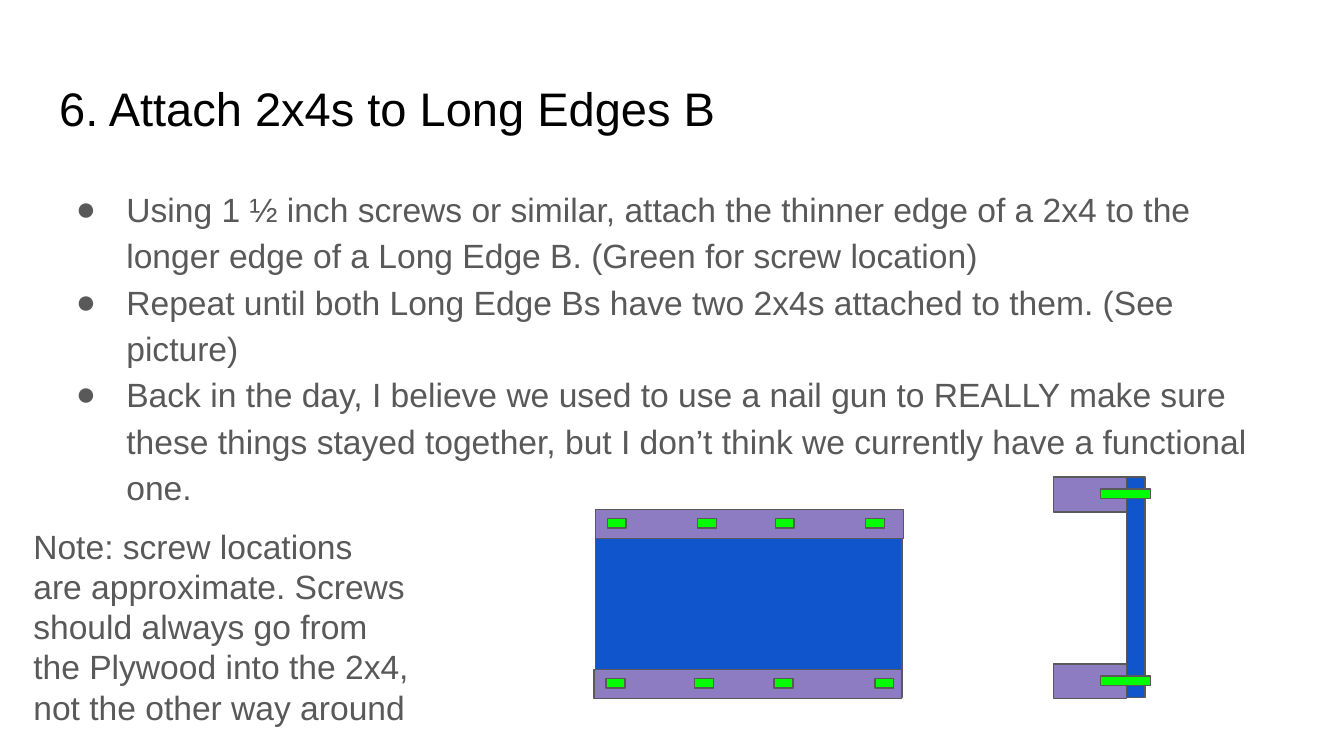
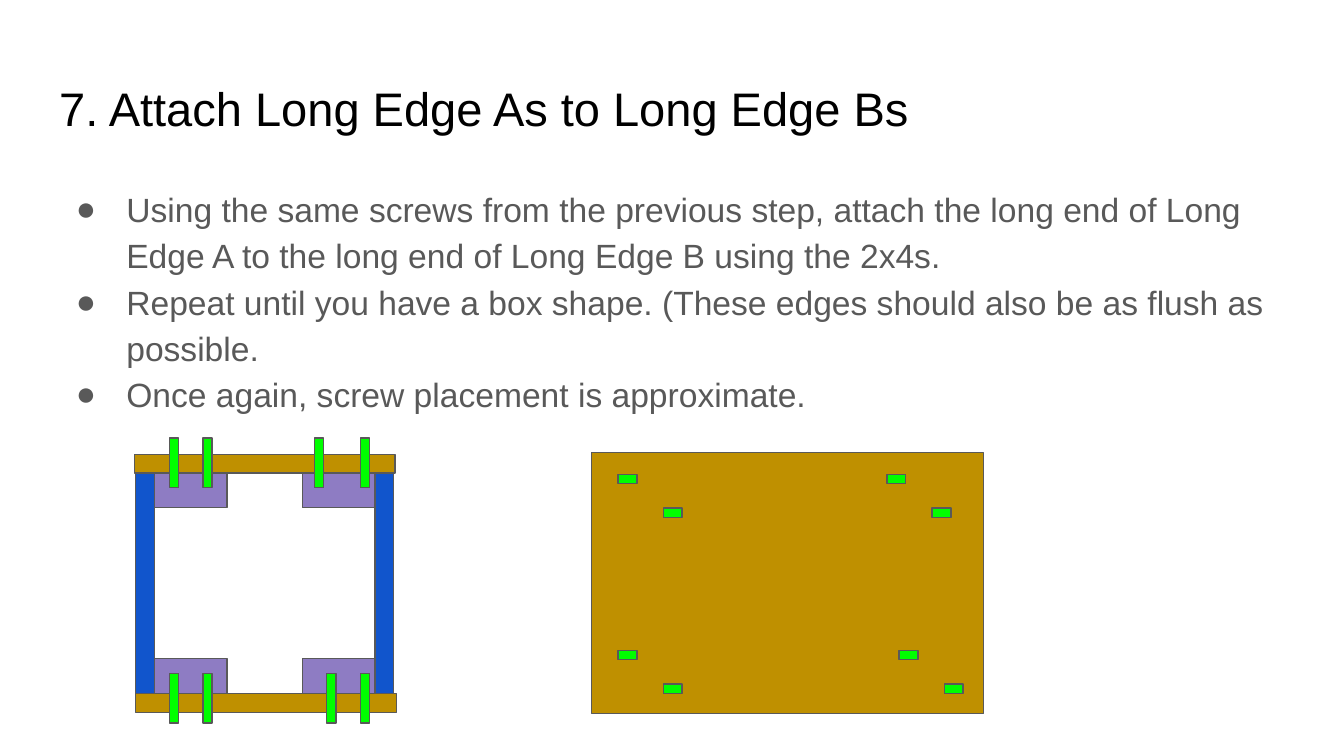
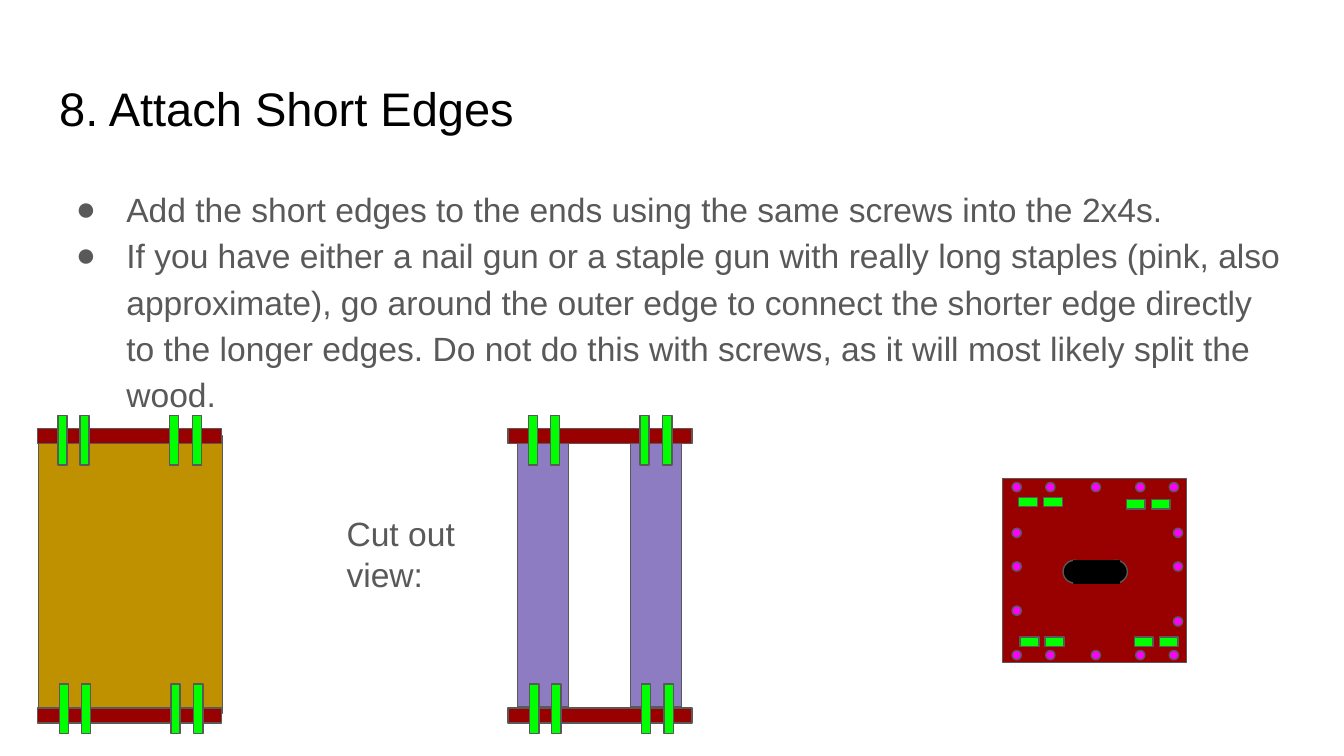
"""Build three assembly-step slides with simple construction diagrams."""
from itertools import product

from lxml.etree import SubElement
from pptx import Presentation
from pptx.dml.color import RGBColor
from pptx.enum.shapes import MSO_SHAPE
from pptx.enum.text import MSO_ANCHOR, MSO_AUTO_SIZE, PP_ALIGN
from pptx.oxml.ns import qn
from pptx.util import Pt

BLUE, PURPLE, GOLD, RED = "1155CC", "8E7CC3", "BF9000", "990000"
GREEN, PINK, BLACK, GREY = "00FF00", "FF00FF", "000000", "595959"
HEAD = (10.1, 5)
SCREW = (26.6, 5)
STUD = (38.9, 18.7)
SIDE = (10.1, 118.1)


def box(s, fill, pos, size, rot=0, kind=MSO_SHAPE.RECTANGLE, line=GREY):
    """Draw one outlined part."""
    sp = s.shapes.add_shape(kind, *map(Pt, (*pos, *size)))
    sp.rotation = rot
    sp.shadow.inherit = False
    sp.fill.solid()
    sp.fill.fore_color.rgb = RGBColor.from_string(fill)
    sp.line.color.rgb = RGBColor.from_string(line)
    sp.line.width = Pt(0.75)


def write(sp, area, texts, size=18, color=GREY, bullet=False):
    """Place a text shape and fill it with one paragraph per text."""
    sp.left, sp.top, sp.width, sp.height = map(Pt, area)
    tf = sp.text_frame
    tf.word_wrap = True
    tf.auto_size = MSO_AUTO_SIZE.NONE
    tf.margin_left = tf.margin_right = tf.margin_top = tf.margin_bottom = Pt(7.2)
    for i, text in enumerate(texts):
        p = tf.add_paragraph() if i else tf.paragraphs[0]
        p.alignment = PP_ALIGN.LEFT
        p.space_before = Pt(0)
        if bullet:
            p.line_spacing = 1.15
            pPr = p._p.get_or_add_pPr()
            pPr.set("marL", str(Pt(36)))
            pPr.set("indent", str(Pt(-27)))
            clr = SubElement(pPr, qn("a:buClr"))
            SubElement(clr, qn("a:srgbClr"), val=color)
            SubElement(pPr, qn("a:buFont"), typeface="Arial")
            SubElement(pPr, qn("a:buChar"), char="●")
        r = p.add_run()
        r.text = text
        r.font.name = "Arial"
        r.font.size = Pt(size)
        r.font.color.rgb = RGBColor.from_string(color)


prs = Presentation()
prs.slide_width, prs.slide_height = Pt(720), Pt(405)

steps = [
    ("6. Attach 2x4s to Long Edges B", 188.6, [
        "Using 1 ½ inch screws or similar, attach the thinner edge of a 2x4 to the "
        "longer edge of a Long Edge B. (Green for screw location)",
        "Repeat until both Long Edge Bs have two 2x4s attached to them. (See picture)",
        "Back in the day, I believe we used to use a nail gun to REALLY make sure these "
        "things stayed together, but I don’t think we currently have a functional one.",
    ]),
    ("7. Attach Long Edge As to Long Edge Bs", 139.7, [
        "Using the same screws from the previous step, attach the long end of Long "
        "Edge A to the long end of Long Edge B using the 2x4s.",
        "Repeat until you have a box shape. (These edges should also be as flush as "
        "possible.",
        "Once again, screw placement is approximate.",
    ]),
    ("8. Attach Short Edges", 140.4, [
        "Add the short edges to the ends using the same screws into the 2x4s.",
        "If you have either a nail gun or a staple gun with really long staples (pink, "
        "also approximate), go around the outer edge to connect the shorter edge "
        "directly to the longer edges. Do not do this with screws, as it will most "
        "likely split the wood.",
    ]),
]
for title, height, bullets in steps:
    s = prs.slides.add_slide(prs.slide_layouts[1])
    write(s.shapes.title, (24.5, 35.3, 671, 45.1), [title], 25.2, BLACK)
    s.shapes.title.text_frame.vertical_anchor = MSO_ANCHOR.MIDDLE
    write(s.placeholders[1], (24.5, 90.7, 671, height), bullets, bullet=True)
edge_b, frame, ends = prs.slides

box(edge_b, BLUE, (319, 272.9), (164.2, 100.8))
for pos in [(319, 272.9), (318.2, 358.6)]:
    box(edge_b, PURPLE, pos, (164.9, 15.8))
box(edge_b, BLUE, (603.4, 255.6), SIDE)
for y in (255.6, 355.7):
    box(edge_b, PURPLE, (564.5, y), STUD)
    box(edge_b, GREEN, (589.7, y + 6.5), SCREW)
for y, xs in [(277.9, (325.4, 373.7, 415.4, 463.7)),
              (363.6, (324.7, 372.2, 414.7, 468.7))]:
    for x in xs:
        box(edge_b, GREEN, (x, y), HEAD)
write(edge_b.shapes.add_textbox(0, 0, 0, 0), (10.8, 274.3, 216, 100.8), [
    "Note: screw locations are approximate. Screws should always go from the "
    "Plywood into the 2x4, not the other way around"])

for x in (72.7, 200.9):
    box(frame, BLUE, (x, 253.4), SIDE)
for pos in product((82.8, 162), (253.4, 352.8)):
    box(frame, PURPLE, pos, STUD)
for pos in [(136.8, 178.6), (137.5, 306.7)]:
    box(frame, GOLD, pos, (10.1, 139.7), 270)
for y, xs in [(245.5, (79.9, 97.9, 157.7, 182.2)),
              (371.5, (79.9, 97.9, 164.2, 182.2))]:
    for x in xs:
        box(frame, GREEN, (x, y), SCREW, 270)
box(frame, GOLD, (316.8, 242.6), (210.2, 139.7))
for x, y in [(331.2, 254.2), (475.2, 254.2), (331.2, 348.5), (481.7, 348.5)]:
    box(frame, GREEN, (x, y), HEAD)
    box(frame, GREEN, (x + 24.2, y + 18), HEAD)

for x in (220.3, 280.8):
    box(ends, PURPLE, (x, 294.5), (141.1, 27.4), 270)
box(ends, GOLD, (-4.3, 258.5), (148.3, 98.6), 270)
for left in (20.2, 272.2):
    for plate_y, screw_y, shift, rot in [(229.7, 233.3, 0, 270), (379.4, 377.3, 0.7, 90)]:
        box(ends, RED, (left, plate_y), (98.6, 7.9))
        for dx in (0, 11.8, 59.8, 72):
            box(ends, GREEN, (left + shift + dx, screw_y), SCREW, rot)
write(ends.shapes.add_textbox(0, 0, 0, 0), (178.6, 267.8, 77, 49.7), ["Cut out view:"])

box(ends, RED, (537.1, 256.3), (98.6, 98.6))
for x in (569.5, 591.8):
    box(ends, BLACK, (x, 300.2), (12.2, 12.2), kind=MSO_SHAPE.OVAL)
box(ends, BLACK, (575.3, 300.2), (24.5, 12.2), line=BLACK)
for x, y in [(545.8, 266.4), (603.4, 267.8), (546.5, 341.3), (607.7, 341.3)]:
    for dx in (0, 13.4):
        box(ends, GREEN, (x + dx, y), HEAD)
staples = [
    *product((542.2, 560.2, 584.6, 608.4, 626.4), (258.5, 348.5)),
    *product((542.2, 628.6), (283, 301)),
    (542.2, 324.7), (628.6, 330.5),
]
for pos in staples:
    box(ends, PINK, pos, (5, 5), kind=MSO_SHAPE.OVAL)

prs.save("out.pptx")
